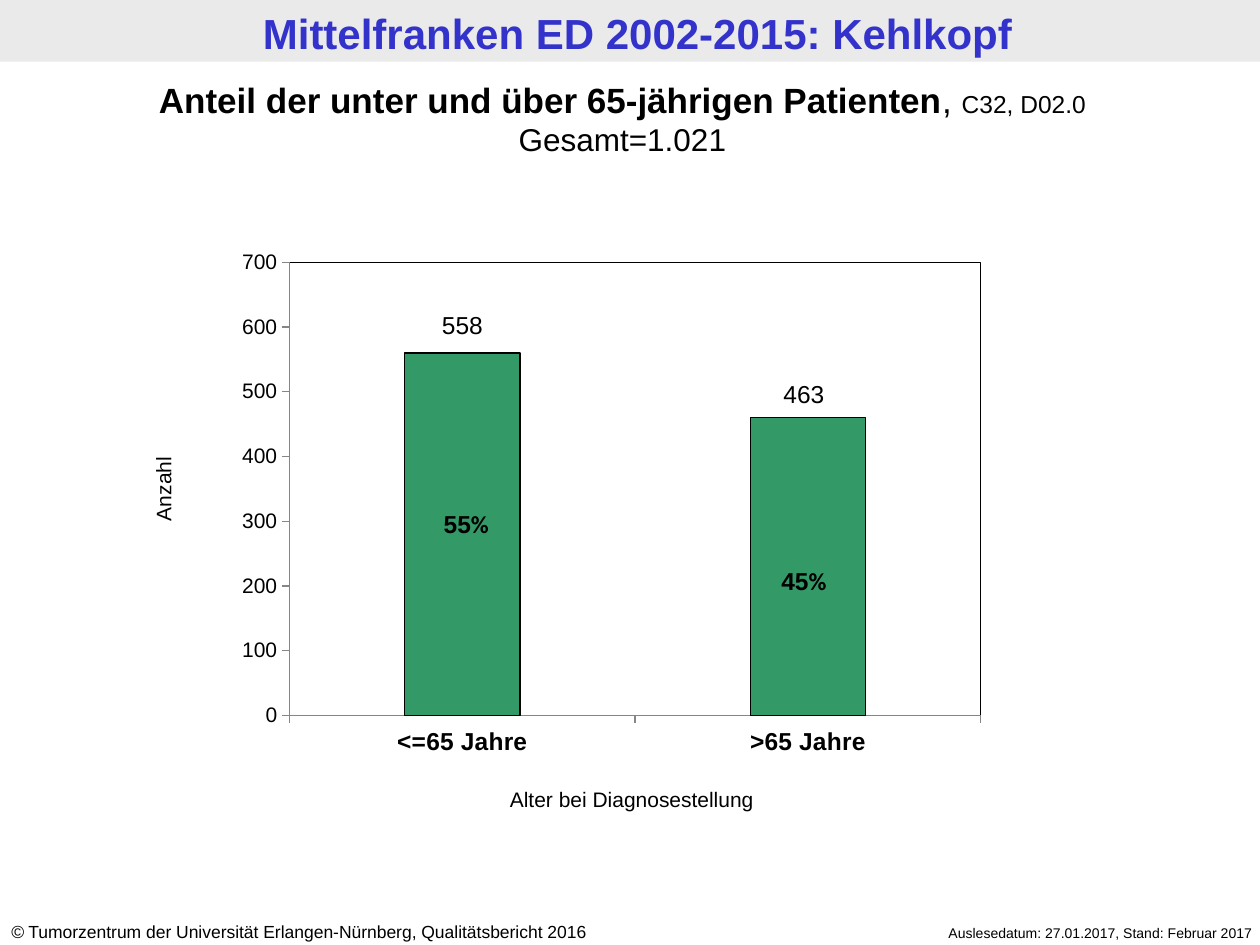
import pptx
import pptx.chart.data
import pptx.dml.color
import pptx.enum.chart
import pptx.enum.shapes
import pptx.enum.text
import pptx.oxml
import pptx.oxml.ns
import pptx.util

Inches, Pt = pptx.util.Inches, pptx.util.Pt
ALIGN = pptx.enum.text.PP_ALIGN
BLACK = "000000"
AGE_GROUPS = ["<=65 Jahre", ">65 Jahre"]
PATIENTS = [558, 463]
COLUMN_HEIGHTS = [round(count, -1) for count in PATIENTS]


def color(hex_string):
    return pptx.dml.color.RGBColor.from_string(hex_string)


def set_font(font, size, bold=False, name="Arial", fill=BLACK):
    font.size, font.bold, font.name = Pt(size), bold, name
    font.color.rgb = color(fill)


def add_text(slide, box, lines, align=ALIGN.CENTER):
    """Each line is a list of (text, font settings) runs."""
    label = slide.shapes.add_textbox(*map(Inches, box))
    frame = label.text_frame
    frame.word_wrap = True
    for index, runs in enumerate(lines):
        paragraph = frame.add_paragraph() if index else frame.paragraphs[0]
        paragraph.alignment = align
        for text, settings in runs:
            run = paragraph.add_run()
            run.text = text
            set_font(run.font, **settings)
    return label


def add_header(slide, left, top, width, height):
    band = slide.shapes.add_shape(pptx.enum.shapes.MSO_SHAPE.RECTANGLE,
                                  *map(Inches, (left, top, width, height)))
    band.shadow.inherit = False
    band.fill.solid()
    band.fill.fore_color.rgb = color("EAEAEA")
    band.line.fill.background()
    add_text(slide, (left + 0.06, top + 0.01, width, height),
             [[("Mittelfranken ED 2002-2015: Kehlkopf",
                dict(size=24, bold=True, fill="3333CC"))]])


def add_subtitle(slide, left, top, width, height):
    add_text(slide, (left, top, width, height), [
        [("Anteil der unter und über 65-jährigen Patienten", dict(size=20, bold=True)),
         (", ", dict(size=20)),
         ("C32, D02.0", dict(size=14))],
        [("Gesamt=1.021", dict(size=18))],
    ])


def format_plot_area(chart, x, y, width, height):
    """Fix the inner plot position and draw its black frame."""
    qn, ns = pptx.oxml.ns.qn, pptx.oxml.ns.nsdecls("c", "a")
    plot_area = chart._chartSpace.chart.plotArea
    for layout in plot_area.findall(qn("c:layout")):
        plot_area.remove(layout)
    sizes = "".join(f'<c:{tag} val="{value}"/>' for tag, value in
                    (("x", x), ("y", y), ("w", width), ("h", height)))
    plot_area.insert(0, pptx.oxml.parse_xml(
        f'<c:layout {ns}><c:manualLayout><c:layoutTarget val="inner"/>'
        f'<c:xMode val="edge"/><c:yMode val="edge"/>{sizes}'
        '</c:manualLayout></c:layout>'))
    plot_area.append(pptx.oxml.parse_xml(
        f'<c:spPr {ns}><a:noFill/><a:ln w="9525"><a:solidFill>'
        f'<a:srgbClr val="{BLACK}"/></a:solidFill></a:ln></c:spPr>'))


def add_age_chart(slide, left, top, width, height):
    kinds = pptx.enum.chart
    data = pptx.chart.data.CategoryChartData()
    data.categories = AGE_GROUPS
    data.add_series("Anzahl", COLUMN_HEIGHTS)
    chart = slide.shapes.add_chart(
        kinds.XL_CHART_TYPE.COLUMN_STACKED,
        *map(Inches, (left, top, width, height)), data).chart
    chart.has_legend = chart.has_title = False
    set_font(chart.font, 18, name="Calibri")

    # Columns
    plot = chart.plots[0]
    plot.gap_width, plot.overlap, plot.vary_by_categories = 200, 100, False
    columns = plot.series[0].format
    columns.fill.solid()
    columns.fill.fore_color.rgb = color("339966")
    columns.line.color.rgb = color(BLACK)
    columns.line.width = Pt(0.75)

    # Axes
    for axis, size, bold in ((chart.category_axis, 14, True),
                             (chart.value_axis, 12, False)):
        axis.has_major_gridlines = False
        axis.major_tick_mark = kinds.XL_TICK_MARK.OUTSIDE
        axis.minor_tick_mark = kinds.XL_TICK_MARK.NONE
        axis.format.line.color.rgb = color("868686")
        axis.format.line.width = Pt(0.75)
        set_font(axis.tick_labels.font, size, bold)
    chart.value_axis.minimum_scale = 0
    chart.value_axis.maximum_scale = 700
    chart.value_axis.major_unit = 100
    format_plot_area(chart, 0.113, 0.142, 0.786, 0.772)


def add_chart_labels(slide, left, top):
    # Shares inside the columns and counts above them
    share_spots = [(1.68, 2.57), (4.36, 3.02)]
    count_spots = [(1.65, 0.99), (4.36, 1.54)]
    for count, share, count_spot in zip(PATIENTS, share_spots, count_spots):
        percent = round(100 * count / sum(PATIENTS))
        add_text(slide, (left + share[0], top + share[1], 1.02, 0.34),
                 [[(str(percent), dict(size=14, bold=True)),
                   ("%", dict(size=14, bold=True, name="Calibri"))]])
        add_text(slide, (left + count_spot[0], top + count_spot[1], 1.02, 0.34),
                 [[(str(count), dict(size=14))]])

    # Axis titles
    add_text(slide, (left + 1.84, top + 4.77, 3.33, 0.3),
             [[("Alter bei Diagnosestellung", dict(size=12))]])
    count_title = add_text(slide, (left - 1.52, top + 2.31, 2.61, 0.3),
                           [[("Anzahl", dict(size=12))]])
    count_title.rotation = 270


def add_footer(slide, left, top, width):
    copyright_line = add_text(
        slide, (left, top, 5.24, 0.27),
        [[("©", dict(size=10)),
          (" Tumorzentrum der Universität Erlangen-Nürnberg, Qualitätsbericht 2016",
           dict(size=10))]], ALIGN.LEFT)
    copyright_line.text_frame.paragraphs[0].runs[0].font.italic = True
    add_text(slide, (left + width - 3.39, top + 0.03, 3.39, 0.24),
             [[("Auslesedatum: 27.01.2017, Stand: Februar 2017", dict(size=8))]],
             ALIGN.RIGHT)


def main():
    deck = pptx.Presentation()
    deck.slide_width, deck.slide_height = Inches(10), Inches(7.5)
    slide = deck.slides.add_slide(deck.slide_layouts[6])
    add_header(slide, 0, 0, 10, 0.49)
    add_footer(slide, -0.01, 7.26, 10.05)
    add_age_chart(slide, 1.51, 1.42, 6.98, 4.66)
    add_subtitle(slide, 0, 0.57, 9.88, 0.74)
    add_chart_labels(slide, 1.51, 1.42)
    deck.save("out.pptx")


if __name__ == "__main__":
    main()
